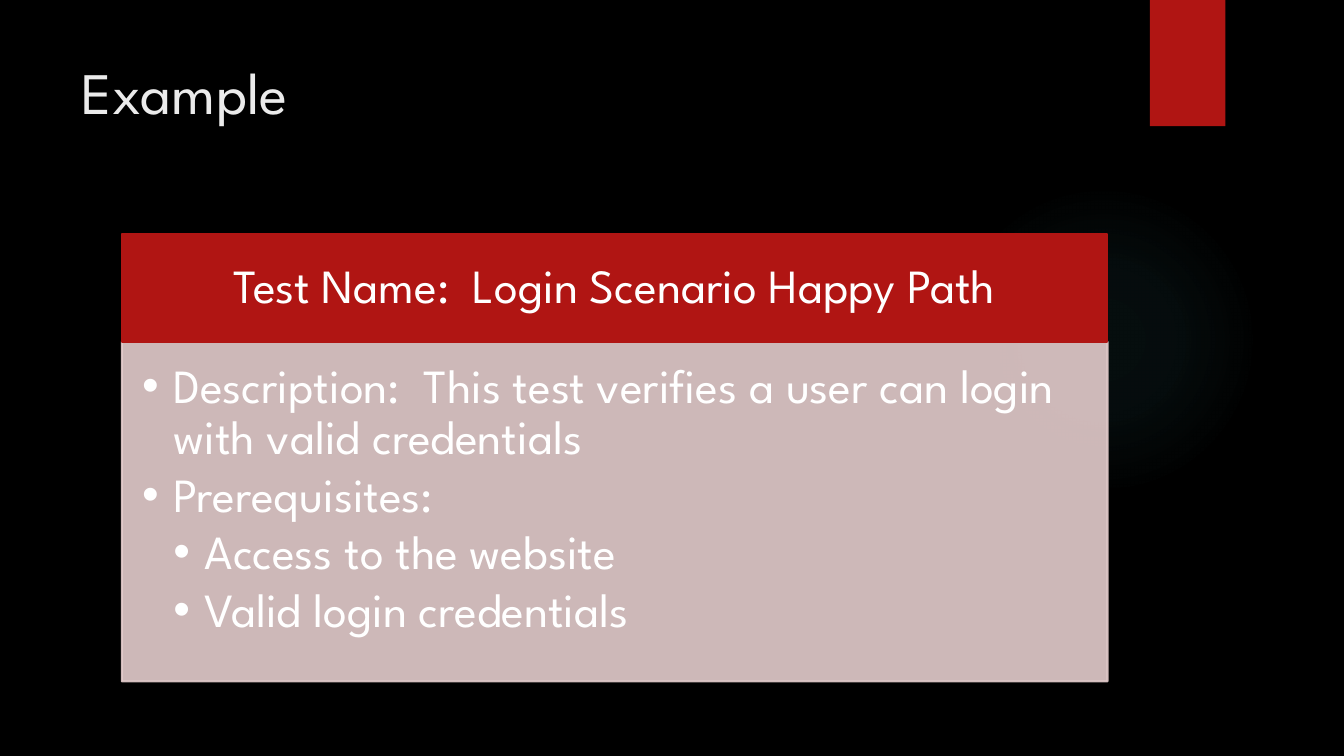
import pptx
import pptx.dml.color
import pptx.enum.shapes
import pptx.enum.text
import pptx.oxml
import pptx.oxml.ns
import pptx.util
from lxml import etree

Cm = pptx.util.Cm
Pt = pptx.util.Pt
qn = pptx.oxml.ns.qn
SHAPE = pptx.enum.shapes.MSO_SHAPE
ANCHOR = pptx.enum.text.MSO_ANCHOR
ALIGN = pptx.enum.text.PP_ALIGN

FONT = "League Spartan"
COLORS = {
    "background": "000000",
    "accent": "B01513",
    "panel": "E4CCCC",
    "title": "EBEBEB",
    "text": "FFFFFF",
    "glow": "50B9C1",
    "shadow": "000000",
}
STEPS = [
    (0, "Description:  This test verifies a user can login with valid credentials"),
    (0, "Prerequisites:"),
    (1, "Access to the website"),
    (1, "Valid login credentials"),
]
HEADER_HEIGHT = 2.72
INDENT = Cm(0.79)


def rgb(name):
    return pptx.dml.color.RGBColor.from_string(COLORS[name])


def place(shape, box):
    shape.left, shape.top, shape.width, shape.height = [Cm(value) for value in box]


def add_flat_shape(slide, kind, box):
    shape = slide.shapes.add_shape(kind, *[Cm(value) for value in box])
    shape.shadow.inherit = False
    return shape


def paint(shape, color):
    shape.fill.solid()
    shape.fill.fore_color.rgb = rgb(color)
    shape.line.color.rgb = rgb(color)
    shape.line.width = Pt(1.5)


def set_frame(frame, insets, anchor):
    """Insets are left, top, right and bottom, in centimetres."""
    frame.word_wrap = True
    frame.auto_size = pptx.enum.text.MSO_AUTO_SIZE.NONE
    frame.vertical_anchor = anchor
    (frame.margin_left, frame.margin_top,
     frame.margin_right, frame.margin_bottom) = [Cm(value) for value in insets]


def write(paragraph, text, size, color):
    run = paragraph.add_run()
    run.text = text
    run.font.name = FONT
    run.font.size = Pt(size)
    run.font.color.rgb = rgb(color)


def add_glow(slide, box):
    glow = add_flat_shape(slide, SHAPE.OVAL, box)
    glow.line.fill.background()
    stops = "".join(
        f'<a:gs pos="{position * 1000}"><a:srgbClr val="{COLORS["glow"]}">'
        f'<a:alpha val="{alpha * 1000}"/></a:srgbClr></a:gs>'
        for position, alpha in [(0, 7), (36, 6), (69, 0)]
    )
    gradient = pptx.oxml.parse_xml(
        f'<a:gradFill {pptx.oxml.ns.nsdecls("a")}><a:gsLst>{stops}</a:gsLst>'
        '<a:path path="circle"><a:fillToRect l="50000" t="50000" r="50000" b="50000"/>'
        '</a:path></a:gradFill>'
    )
    properties = glow.element.spPr
    properties.find(qn("a:prstGeom")).addnext(gradient)
    slide.shapes.element.insert(2, glow.element)


def add_tab(slide, box):
    tab = add_flat_shape(slide, SHAPE.RECTANGLE, box)
    paint(tab, "accent")
    tab.line.fill.background()
    effects = tab.element.spPr.find(qn("a:effectLst"))
    shadow = etree.SubElement(effects, qn("a:outerShdw"), blurRad=str(Pt(3)),
                              dist=str(Pt(2)), dir="5400000", rotWithShape="0")
    color = etree.SubElement(shadow, qn("a:srgbClr"), val=COLORS["shadow"])
    etree.SubElement(color, qn("a:alpha"), val="45000")


def add_title(slide, box):
    title = slide.shapes.title
    place(title, box)
    set_frame(title.text_frame, (0.25, 0.13, 0.25, 0.13), ANCHOR.TOP)
    heading = title.text_frame.paragraphs[0]
    heading.alignment = ALIGN.LEFT
    write(heading, "Example", 42, "title")


def add_test_card(slide, box):
    """Red header with the test name above a translucent panel of steps."""
    left, top, width, height = box
    header = add_flat_shape(slide, SHAPE.RECTANGLE, (left, top, width, HEADER_HEIGHT))
    paint(header, "accent")
    set_frame(header.text_frame, (0.66, 0.38, 0.66, 0.38), ANCHOR.MIDDLE)
    test_name = header.text_frame.paragraphs[0]
    test_name.alignment = ALIGN.CENTER
    test_name.line_spacing = 0.9
    write(test_name, "Test Name:  Login Scenario Happy Path", 34, "text")

    panel = slide.placeholders[1]
    place(panel, (left, top + HEADER_HEIGHT, width, height - HEADER_HEIGHT))
    paint(panel, "panel")
    for color in panel.element.spPr.iter(qn("a:srgbClr")):
        etree.SubElement(color, qn("a:alpha"), val="90000")
    frame = panel.text_frame
    set_frame(frame, (0.51, 0.51, 0.66, 0.76), ANCHOR.TOP)
    for index, (level, text) in enumerate(STEPS):
        step = frame.add_paragraph() if index else frame.paragraphs[0]
        step.level = level
        step.alignment = ALIGN.LEFT
        step.line_spacing = 0.9
        step.space_before = Pt(0)
        step.space_after = Pt(4.5)
        properties = step._p.get_or_add_pPr()
        properties.set("marL", str(INDENT * (level + 1)))
        properties.set("indent", str(-INDENT))
        etree.SubElement(properties, qn("a:buChar"), char="•")
        write(step, text, 34, "text")


def main():
    deck = pptx.Presentation()
    deck.slide_width, deck.slide_height = Cm(33.87), Cm(19.05)
    slide = deck.slides.add_slide(deck.slide_layouts[1])
    slide.background.fill.solid()
    slide.background.fill.fore_color.rgb = rgb("background")
    add_glow(slide, (23.9, 4.65, 7.82, 7.82))
    add_tab(slide, (28.98, 0, 1.9, 3.18))
    add_title(slide, (1.8, 1.27, 26.14, 3.89))
    add_test_card(slide, (3.07, 5.89, 24.84, 11.28))
    deck.save("out.pptx")


if __name__ == "__main__":
    main()
